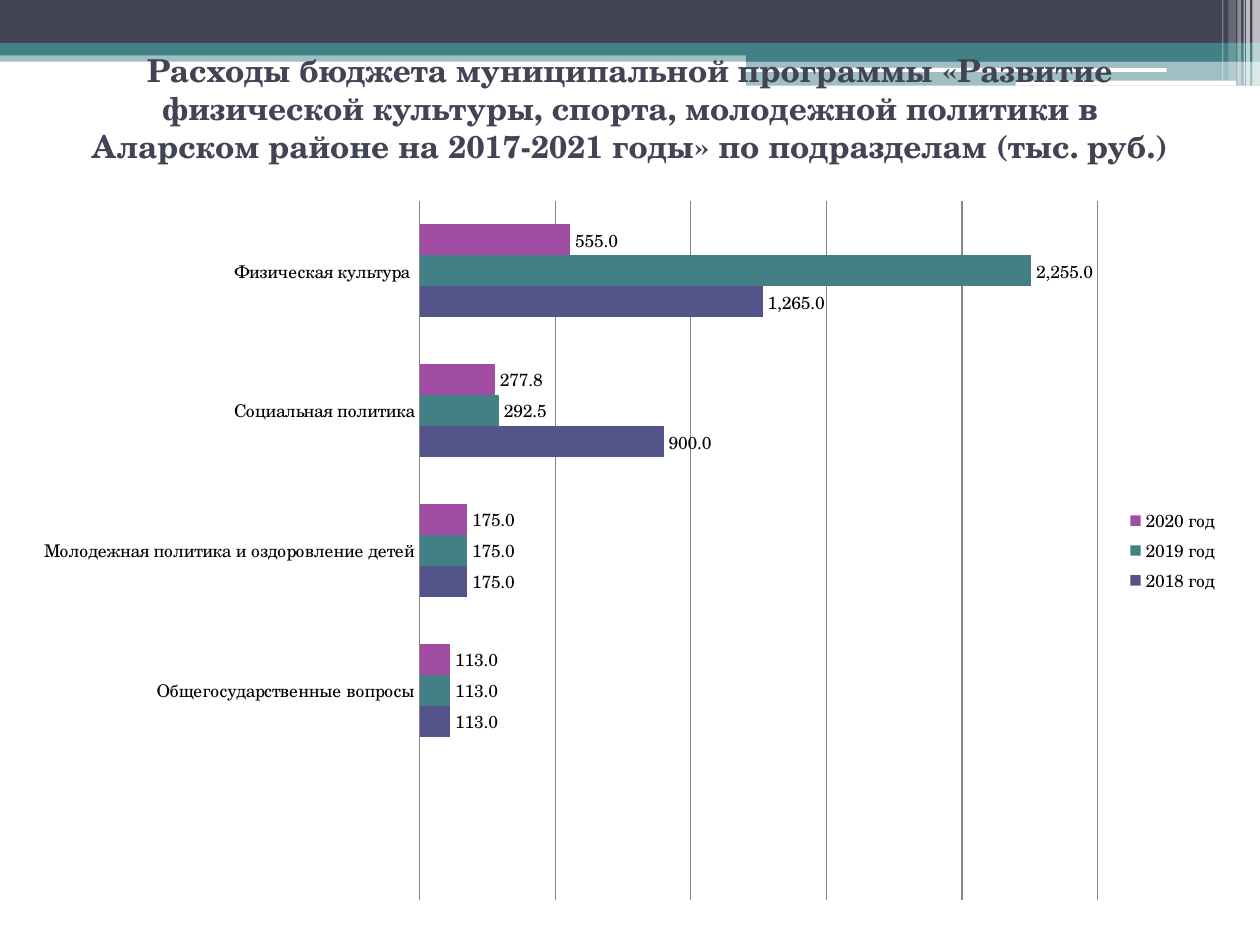
from lxml import etree
from pptx import Presentation
from pptx.chart.data import CategoryChartData
from pptx.dml.color import RGBColor
from pptx.enum import chart as ch, shapes, text
from pptx.oxml import ns, parse_xml
from pptx.util import Inches, Pt

THEME = {
    "font": "TeX Gyre Schola",
    "title_size": Pt(18),
    "chart_size": Pt(10),
    "dark": "424456",
    "teal": "438086",
    "white": "FFFFFF",
    "black": "000000",
    "grid": "868686",
    "series": ["53548A", "438086", "A04DA3"],
}


def color(name):
    return RGBColor.from_string(THEME.get(name, name))


def add_band(s, x, y, w, h, fill, opacity=100, kind=shapes.MSO_SHAPE.RECTANGLE):
    sp = s.shapes.add_shape(kind, Inches(x), Inches(y), Inches(w), Inches(h))
    sp.shadow.inherit = False
    sp.line.fill.background()
    sp.fill.solid()
    sp.fill.fore_color.rgb = color(fill)
    if opacity < 100:
        clr = sp._element.spPr.find(".//" + ns.qn("a:srgbClr"))
        etree.SubElement(clr, ns.qn("a:alpha"), val=str(opacity * 1000))


prs = Presentation()
prs.slide_width, prs.slide_height = Inches(10), Inches(7.5)
s = prs.slides.add_slide(prs.slide_layouts[5])

for x, y, w, h, fill, opacity in [
    (0, 0.4, 10, 0.09, "teal", 50),
    (0, 0, 10, 0.34, "dark", 100),
    (0, 0.34, 10, 0.1, "teal", 100),
    (5.92, 0.39, 4.08, 0.1, "teal", 100),
    (5.92, 0.48, 4.08, 0.2, "teal", 50),
]:
    add_band(s, x, y, w, h, fill, opacity)

for x, y, w, h in [(5.91, 0.54, 3.35, 0.03), (8.06, 0.64, 1.75, 0.04)]:
    add_band(s, x, y, w, h, "white", kind=shapes.MSO_SHAPE.ROUNDED_RECTANGLE)

for x, w, h, opacity in [
    (9.94, 0.06, 0.68, 65),
    (9.89, 0.03, 0.68, 65),
    (9.87, 0.01, 0.68, 60),
    (9.82, 0.03, 0.68, 40),
    (9.75, 0.06, 0.64, 20),
    (9.7, 0.01, 0.64, 30),
]:
    add_band(s, x, 0, w, h, "white", opacity)

title = s.shapes.title
title.left, title.top = Inches(0.5), Inches(0.3)
title.width, title.height = Inches(9), Inches(1.11)
s.shapes._spTree.append(title._element)
tf = title.text_frame
tf.word_wrap = True
tf.vertical_anchor = text.MSO_ANCHOR.MIDDLE
p = tf.paragraphs[0]
p.text = (
    "Расходы бюджета муниципальной программы «Развитие физической культуры, "
    "спорта, молодежной политики в Аларском районе на 2017-2021 годы» "
    "по подразделам (тыс. руб.)"
)
p.alignment = text.PP_ALIGN.CENTER
p.font.name = THEME["font"]
p.font.size = THEME["title_size"]
p.font.bold = True
p.font.color.rgb = color("dark")

data = CategoryChartData(number_format="#,##0.0")
data.categories = [
    "",
    "Общегосударственные вопросы",
    "Молодежная политика и оздоровление детей",
    "Социальная политика",
    "Физическая культура ",
]
data.add_series("2018 год", [None, 113, 175, 900, 1265])
data.add_series("2019 год", [None, 113, 175, 292.5, 2255])
data.add_series("2020 год", [None, 113, 175, 277.8, 555])
chart = s.shapes.add_chart(
    ch.XL_CHART_TYPE.BAR_CLUSTERED,
    Inches(0.16), Inches(1.48), Inches(9.61), Inches(5.78), data,
).chart
chart.has_title = False
chart.font.name = THEME["font"]
chart.font.size = THEME["chart_size"]
chart.font.color.rgb = color("black")
chart.has_legend = True
chart.legend.position = ch.XL_LEGEND_POSITION.RIGHT
chart.legend.include_in_layout = False

plot = chart.plots[0]
plot.gap_width = 150
plot.overlap = 0
plot.vary_by_categories = False
for series, fill in zip(plot.series, THEME["series"]):
    series.format.fill.solid()
    series.format.fill.fore_color.rgb = color(fill)
    labels = series.data_labels
    labels.show_value = True
    labels.number_format = "#,##0.0"
    labels.number_format_is_linked = False
    labels.position = ch.XL_LABEL_POSITION.OUTSIDE_END

cat_axis, val_axis = chart.category_axis, chart.value_axis
cat_axis.major_tick_mark = ch.XL_TICK_MARK.NONE
cat_axis.format.line.color.rgb = color("grid")
val_axis.visible = False
val_axis.minimum_scale, val_axis.maximum_scale = 0, 2500
val_axis.major_unit = 500
val_axis.has_major_gridlines = True
val_axis.major_gridlines.format.line.color.rgb = color("grid")
val_axis.tick_labels.number_format = "#,##0.0"
val_axis.tick_labels.number_format_is_linked = False

plot_area = chart._chartSpace.chart.plotArea
for old in plot_area.findall(ns.qn("c:layout")):
    plot_area.remove(old)
plot_area.insert(0, parse_xml(
    f'<c:layout {ns.nsdecls("c")}><c:manualLayout>'
    '<c:layoutTarget val="inner"/><c:xMode val="edge"/><c:yMode val="edge"/>'
    '<c:x val="0.33"/><c:y val="0.02"/><c:w val="0.56"/><c:h val="0.96"/>'
    '</c:manualLayout></c:layout>'
))

prs.save("out.pptx")
